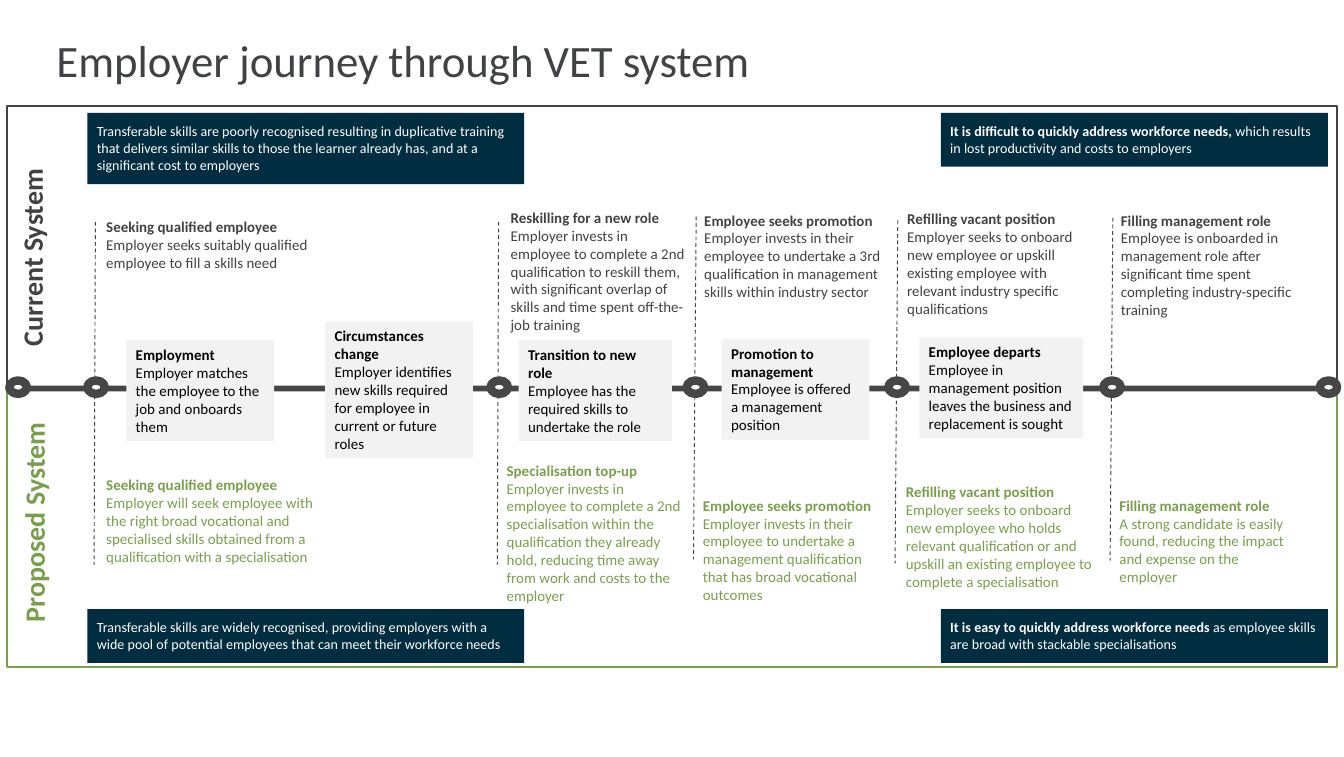
"""Build the slide that compares the employer journey in two VET systems."""
import dataclasses

import pptx
import pptx.dml.color
import pptx.enum.dml
import pptx.enum.shapes
import pptx.enum.text
import pptx.oxml
import pptx.util

SHAPES = pptx.enum.shapes.MSO_SHAPE
ANCHORS = pptx.enum.text.MSO_ANCHOR
ALIGNMENTS = pptx.enum.text.PP_ALIGN
EMU_PER_PX = 9144
MARKER_SIZE = (13, 10)
MARKER_TOP = 283
GUIDE_HEIGHT = 255


@dataclasses.dataclass(frozen=True)
class Theme:
    """Hold the colours, the font and the type sizes."""
    font: str = "Calibri"
    current: str = "404246"
    proposed: str = "7A9F4C"
    track: str = "464646"
    step: str = "F2F2F2"
    banner: str = "002D3F"
    black: str = "000000"
    white: str = "FFFFFF"
    title_size: float = 24
    side_size: float = 15
    body_size: float = 8
    banner_size: float = 7.5


THEME = Theme()

CURRENT_NOTES = [
    ((72, 158, 169, 61), "Seeking qualified employee",
     "Employer seeks suitably qualified employee to fill a skills need"),
    ((373, 151, 144, 102), "Reskilling for a new role",
     "Employer invests in employee to complete a 2nd qualification to reskill them, "
     "with significant overlap of skills and time spent off-the-job training"),
    ((517, 153, 150, 75), "Employee seeks promotion",
     "Employer invests in their employee to undertake a 3rd qualification in management "
     "skills within industry sector"),
    ((668, 152, 147, 88), "Refilling vacant position",
     "Employer seeks to onboard new employee or upskill existing employee with relevant "
     "industry specific qualifications"),
    ((827, 153, 153, 88), "Filling management role",
     "Employee is onboarded in management role after significant time spent completing "
     "industry-specific training"),
]
PROPOSED_NOTES = [
    ((72, 350, 169, 88), "Seeking qualified employee",
     "Employer will seek employee with the right broad vocational and specialised skills "
     "obtained from a qualification with a specialisation"),
    ((370, 339, 146, 115), "Specialisation top-up",
     "Employer invests in employee to complete a 2nd specialisation within the "
     "qualification they already hold, reducing time away from work and costs to the employer"),
    ((516, 365, 146, 88), "Employee seeks promotion",
     "Employer invests in their employee to undertake a management qualification that has "
     "broad vocational outcomes"),
    ((667, 355, 159, 88), "Refilling vacant position",
     "Employer seeks to onboard new employee who holds relevant qualification or and upskill "
     "an existing employee to complete a specialisation"),
    ((826, 365, 146, 75), "Filling management role",
     "A strong candidate is easily found, reducing the impact and expense on the employer"),
]
STEPS = [
    ((94, 253, 110, 75), "Employment",
     "Employer matches the employee to the job and onboards them"),
    ((242, 239, 110, 102), "Circumstances change",
     "Employer identifies new skills required for employee in current or future roles"),
    ((386, 253, 114, 75), "Transition to new role",
     "Employee has the required skills to undertake the role"),
    ((537, 252, 110, 75), "Promotion to management",
     "Employee is offered a management position"),
    ((684, 251, 122, 75), "Employee departs",
     "Employee in management position leaves the business and replacement is sought"),
]
BANNERS = [
    ((65, 84, 325, 53), "",
     "Transferable skills are poorly recognised resulting in duplicative training that "
     "delivers similar skills to those the learner already has, and at a significant cost "
     "to employers"),
    ((65, 453, 325, 40), "",
     "Transferable skills are widely recognised, providing employers with a wide pool of "
     "potential employees that can meet their workforce needs"),
    ((700, 84, 288, 40), "It is difficult to quickly address workforce needs,",
     " which results in lost productivity and costs to employers"),
    ((700, 453, 288, 40), "It is easy to quickly address workforce needs",
     " as employee skills are broad with stackable specialisations"),
]
MILESTONES = [(65, 71, 165), (365, 371, 165), (511, 518, 161), (661, 668, 164), (821, 828, 162)]
TRACK_ENDS = (7, 982)


def px(length):
    """Turn px into EMU."""
    return pptx.util.Emu(length * EMU_PER_PX)


def apply_format(target, values):
    """Set each attribute in a dict of format values."""
    for name, value in values.items():
        setattr(target, name, value)


def rgb(colour):
    """Turn a hex string into a colour."""
    return pptx.dml.color.RGBColor.from_string(colour)


def add_block(slide, box, fill=None, line=None, line_width=1, kind=SHAPES.RECTANGLE):
    """Add a preset shape with an optional fill and outline."""
    shape = slide.shapes.add_shape(kind, *map(px, box))
    shape.shadow.inherit = False
    if fill:
        shape.fill.solid()
        shape.fill.fore_color.rgb = rgb(fill)
    else:
        shape.fill.background()
    if line:
        shape.line.color.rgb = rgb(line)
        shape.line.width = pptx.util.Pt(line_width)
    else:
        shape.line.fill.background()
    return shape


def write_text(shape, paragraphs, colour, size, inset=4, anchor=ANCHORS.TOP,
               alignment=ALIGNMENTS.LEFT):
    """Write paragraphs of (text, bold) runs into a shape."""
    frame = shape.text_frame
    apply_format(frame, {
        "word_wrap": True, "vertical_anchor": anchor,
        "margin_left": px(7), "margin_right": px(7),
        "margin_top": px(inset), "margin_bottom": px(inset),
    })
    for index, runs in enumerate(paragraphs):
        paragraph = frame.add_paragraph() if index else frame.paragraphs[0]
        paragraph.alignment = alignment
        for text, bold in runs:
            run = paragraph.add_run()
            run.text = text
            apply_format(run.font, {"name": THEME.font, "size": pptx.util.Pt(size), "bold": bold})
            run.font.color.rgb = rgb(colour)


def add_label(slide, box, text, colour, size, rotation=0, **options):
    """Add a one-line text box."""
    label = slide.shapes.add_textbox(*map(px, box))
    label.rotation = rotation
    write_text(label, [[(text, rotation != 0)]], colour, size, **options)


def add_note(slide, box, heading, body, colour):
    """Add a text box with a bold heading over its body."""
    note = slide.shapes.add_textbox(*map(px, box))
    write_text(note, [[(heading, True)], [(body, False)]], colour, THEME.body_size)


def add_step(slide, box, heading, body):
    """Add a grey box on the track."""
    step = add_block(slide, box, THEME.step)
    write_text(step, [[(heading, True)], [(body, False)]], THEME.black, THEME.body_size)


def add_banner(slide, box, lead, rest):
    """Add a dark banner with an optional bold lead."""
    banner = add_block(slide, box, THEME.banner)
    runs = [run for run in ((lead, True), (rest, False)) if run[0]]
    write_text(banner, [runs], THEME.white, THEME.banner_size, inset=7)


def add_marker(slide, left):
    """Add a ring on the track."""
    add_block(slide, (left, MARKER_TOP, *MARKER_SIZE), THEME.white, THEME.track, 4.5,
              SHAPES.OVAL)


def add_guide(slide, x, top):
    """Add a dashed line that leans slightly to the left."""
    guide = slide.shapes.add_connector(
        pptx.enum.shapes.MSO_CONNECTOR.STRAIGHT,
        px(x), px(top), px(x - 2 if x in (518, 668, 828) else x - 1), px(top + GUIDE_HEIGHT))
    guide.line.color.rgb = rgb(THEME.track)
    apply_format(guide.line, {"width": pptx.util.Pt(0.5),
                              "dash_style": pptx.enum.dml.MSO_LINE.DASH})
    properties = guide._element.spPr
    properties.append(pptx.oxml.parse_xml(
        '<a:effectLst xmlns:a="http://schemas.openxmlformats.org/drawingml/2006/main"/>'))


def main():
    """Build and save the slide."""
    presentation = pptx.Presentation()
    apply_format(presentation, {"slide_width": px(1000), "slide_height": px(563)})
    slide = presentation.slides.add_slide(presentation.slide_layouts[6])
    add_block(slide, (5, 290, 990, 206), line=THEME.proposed)
    add_block(slide, (5, 79, 990, 211), THEME.white, THEME.current)
    add_label(slide, (35, 22, 799, 45), "Employer journey through VET system",
              THEME.current, THEME.title_size, inset=7, anchor=ANCHORS.MIDDLE)
    for box, text, colour in (((-74, 175, 195, 33), "Current System", THEME.current),
                              ((-71, 372, 192, 33), "Proposed System", THEME.proposed)):
        add_label(slide, box, text, colour, THEME.side_size, 270, alignment=ALIGNMENTS.CENTER)
    for notes, colour in ((CURRENT_NOTES, THEME.current), (PROPOSED_NOTES, THEME.proposed)):
        for note in notes:
            add_note(slide, *note, colour)
    add_block(slide, (5, 286, 984, 6), THEME.track, THEME.track, kind=SHAPES.RIGHT_ARROW)
    for left in TRACK_ENDS:
        add_marker(slide, left)
    for step in STEPS:
        add_step(slide, *step)
    for left, x, top in MILESTONES:
        add_guide(slide, x, top)
        add_marker(slide, left)
    for banner in BANNERS:
        add_banner(slide, *banner)
    presentation.save("out.pptx")


if __name__ == "__main__":
    main()
